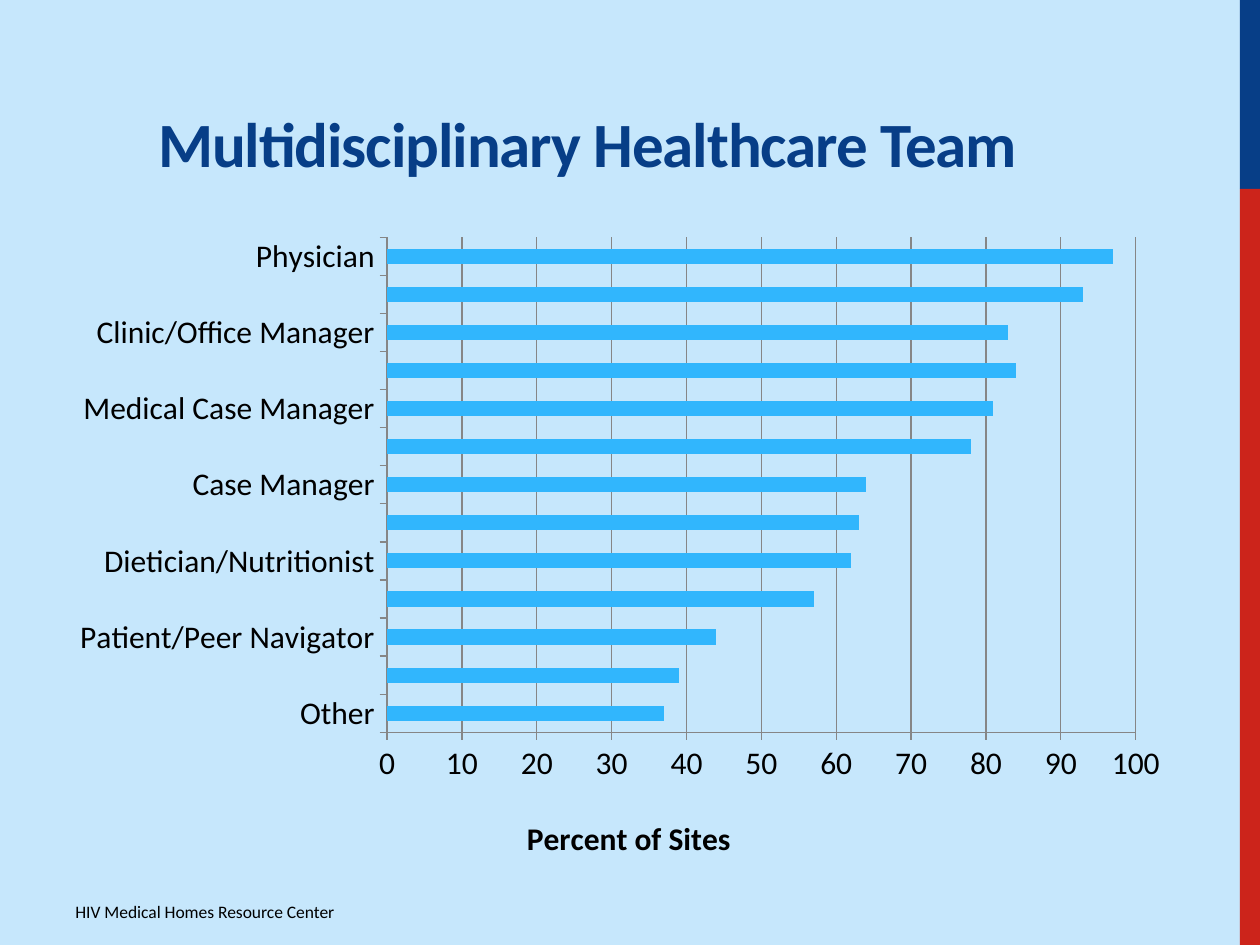
import pptx
import pptx.chart.data
import pptx.dml.color
import pptx.enum.chart
import pptx.enum.shapes
import pptx.enum.text
import pptx.oxml
import pptx.oxml.ns
import pptx.util
from pptx.util import Inches

FONT = "Calibri"
NAVY = "073E87"
BLACK = "000000"
GREY = "868686"

STAFF_PERCENTAGES = [
    ("Other", 37),
    ("Physician Assistant", 39),
    ("Patient/Peer Navigator", 44),
    ("Outreach Worker", 57),
    ("Dietician/Nutritionist", 62),
    ("Social Worker", 63),
    ("Case Manager", 64),
    ("Advanced Practice Nurse", 78),
    ("Medical Case Manager", 81),
    ("Receptionist", 84),
    ("Clinic/Office Manager", 83),
    ("Nurse", 93),
    ("Physician", 97),
]


def set_color(color_format, color):
    color_format.rgb = pptx.dml.color.RGBColor.from_string(color)


def style_font(font, size, color=BLACK, bold=False):
    font.name = FONT
    font.size = pptx.util.Pt(size)
    font.bold = bold
    set_color(font.color, color)


def style_line(line, color):
    set_color(line.color, color)
    line.width = pptx.util.Pt(0.75)


def add_panel(slide, left, top, width, height, color):
    panel = slide.shapes.add_shape(
        pptx.enum.shapes.MSO_SHAPE.RECTANGLE,
        Inches(left), Inches(top), Inches(width), Inches(height))
    panel.shadow.inherit = False
    panel.fill.solid()
    set_color(panel.fill.fore_color, color)
    panel.line.fill.background()


def add_text(slide, left, top, width, height, text, size, color=BLACK, bold=False):
    box = slide.shapes.add_textbox(
        Inches(left), Inches(top), Inches(width), Inches(height))
    box.text_frame.word_wrap = True
    box.text_frame.text = text
    style_font(box.text_frame.paragraphs[0].runs[0].font, size, color, bold)
    return box.text_frame


def add_title(slide, text):
    frame = add_text(slide, 0.5, 0.37, 8.33, 1.11, text, 36, NAVY, True)
    frame.vertical_anchor = pptx.enum.text.MSO_ANCHOR.BOTTOM
    paragraph = frame.paragraphs[0]
    paragraph.alignment = pptx.enum.text.PP_ALIGN.CENTER
    paragraph.runs[0].font._element.set("spc", "-60")


def set_layout(element, target=None, **fractions):
    """Place a chart part by fractions of the chart's size."""
    old_layout = element.find(pptx.oxml.ns.qn("c:layout"))
    position = 0
    if old_layout is not None:
        position = element.index(old_layout)
        element.remove(old_layout)
    settings = {"layoutTarget": target} if target else {}
    settings.update(xMode="edge", yMode="edge", **fractions)
    children = "".join(f'<c:{tag} val="{value}"/>' for tag, value in settings.items())
    element.insert(position, pptx.oxml.parse_xml(
        f'<c:layout {pptx.oxml.ns.nsdecls("c")}>'
        f"<c:manualLayout>{children}</c:manualLayout></c:layout>"))


def add_staff_chart(slide):
    data = pptx.chart.data.CategoryChartData()
    data.categories = [role for role, _ in STAFF_PERCENTAGES]
    data.add_series("Series 1", [percent for _, percent in STAFF_PERCENTAGES])
    chart = slide.shapes.add_chart(
        pptx.enum.chart.XL_CHART_TYPE.BAR_CLUSTERED,
        Inches(0.5), Inches(1.78), Inches(8.87), Inches(5.17), data).chart
    chart.has_legend = False
    chart.has_title = False
    style_font(chart.font, 18)

    plot = chart.plots[0]
    plot.vary_by_categories = False
    plot.gap_width = 150
    fill = plot.series[0].format.fill
    fill.solid()
    set_color(fill.fore_color, "31B6FD")

    for axis in (chart.category_axis, chart.value_axis):
        axis.major_tick_mark = pptx.enum.chart.XL_TICK_MARK.OUTSIDE
        axis.minor_tick_mark = pptx.enum.chart.XL_TICK_MARK.NONE
        style_line(axis.format.line, GREY)

    value_axis = chart.value_axis
    value_axis.minimum_scale = 0
    value_axis.maximum_scale = 100
    value_axis.major_unit = 10
    value_axis.has_major_gridlines = True
    style_line(value_axis.major_gridlines.format.line, GREY)
    title_frame = value_axis.axis_title.text_frame
    title_frame.text = "Percent of Sites"
    style_font(title_frame.paragraphs[0].runs[0].font, 18, bold=True)

    set_layout(value_axis.axis_title._element, x=0.41, y=0.9)
    plot_area = chart._chartSpace.chart.plotArea
    set_layout(plot_area, "inner", x=0.29, y=0.02, w=0.67, h=0.76)


def main():
    presentation = pptx.Presentation()
    presentation.slide_width = Inches(10)
    presentation.slide_height = Inches(7.5)
    slide = presentation.slides.add_slide(presentation.slide_layouts[6])

    add_panel(slide, 0, 0, 9.84, 7.5, "C6E7FC")
    add_panel(slide, 9.84, 0, 0.16, 1.5, NAVY)
    add_panel(slide, 9.84, 1.5, 0.16, 6, "CC241B")
    add_title(slide, "Multidisciplinary Healthcare Team")
    add_text(slide, 0.5, 7.1, 3.75, 0.31, "HIV Medical Homes Resource Center", 10)
    add_staff_chart(slide)
    presentation.save("out.pptx")


if __name__ == "__main__":
    main()
